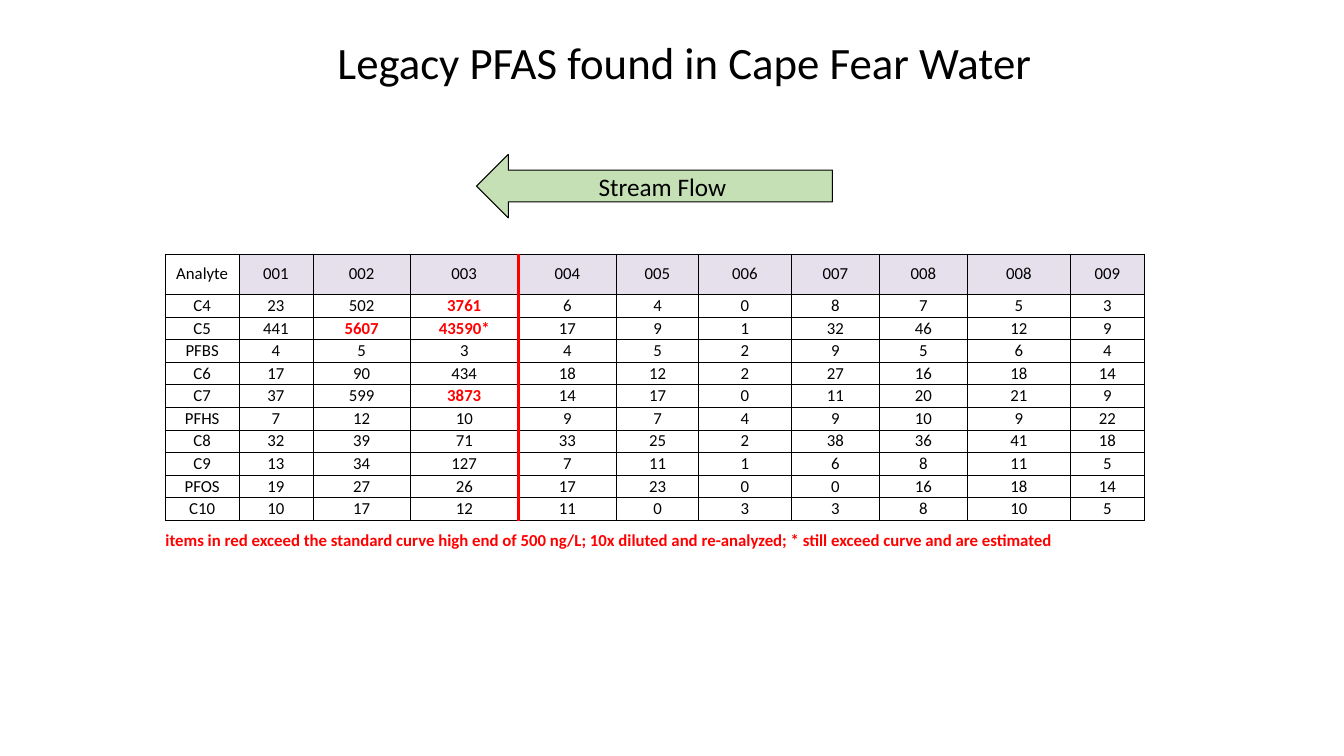
from lxml import etree
from pptx import Presentation
from pptx import util as u
from pptx.dml.color import RGBColor
from pptx.enum import shapes, text
from pptx.oxml.ns import qn

# Content
TITLE = "Legacy PFAS found in Cape Fear Water"
FLOW = "Stream Flow"
HEADER = ["Analyte", "001", "002", "003", "004", "005", "006", "007", "008", "008", "009"]
RESULTS = [
    ("C4", 23, 502, 3761, 6, 4, 0, 8, 7, 5, 3),
    ("C5", 441, 5607, "43590*", 17, 9, 1, 32, 46, 12, 9),
    ("PFBS", 4, 5, 3, 4, 5, 2, 9, 5, 6, 4),
    ("C6", 17, 90, 434, 18, 12, 2, 27, 16, 18, 14),
    ("C7", 37, 599, 3873, 14, 17, 0, 11, 20, 21, 9),
    ("PFHS", 7, 12, 10, 9, 7, 4, 9, 10, 9, 22),
    ("C8", 32, 39, 71, 33, 25, 2, 38, 36, 41, 18),
    ("C9", 13, 34, 127, 7, 11, 1, 6, 8, 11, 5),
    ("PFOS", 19, 27, 26, 17, 23, 0, 0, 16, 18, 14),
    ("C10", 10, 17, 12, 11, 0, 3, 3, 8, 10, 5),
]
EXCEEDING = {3761, 5607, "43590*", 3873}
NOTE = ("items in red exceed the standard curve high end of 500 ng/L; "
        "10x diluted and re-analyzed; * still exceed curve and are estimated")

# Layout in centimetres
LEFT, TOP = 4.17, 6.4
COLS = [1.85, 1.87, 2.45, 2.72, 2.48, 2.06, 2.34, 2.22, 2.22, 2.59, 1.87]
HEAD_H, ROW_H = 1.02, 0.57
BLACK, RED, WHITE, LILAC, GREEN = "000000", "FF0000", "FFFFFF", "E5E0EC", "C5E0B4"


def rgb(value):
    return RGBColor.from_string(value)


def write(tf, content, size=12, color=BLACK, bold=False,
          align=text.PP_ALIGN.CENTER):
    p = tf.paragraphs[0]
    p.alignment = align
    r = p.add_run()
    r.text = str(content)
    r.font.name, r.font.size, r.font.bold = "Calibri", u.Pt(size), bold
    r.font.color.rgb = rgb(color)


def add_borders(cell, visible):
    tc_pr = cell._tc.get_or_add_tcPr()
    for side in "LRTB":
        ln = etree.SubElement(tc_pr, qn(f"a:ln{side}"), w=str(u.Pt(0.5)))
        if side in visible:
            fill = etree.SubElement(ln, qn("a:solidFill"))
            etree.SubElement(fill, qn("a:srgbClr"), val=BLACK)
        else:
            etree.SubElement(ln, qn("a:noFill"))


def format_cell(cell, fill=None, borders="LRTB", anchor=text.MSO_ANCHOR.MIDDLE):
    add_borders(cell, borders)
    cell.margin_left = cell.margin_right = cell.margin_top = cell.margin_bottom = 0
    cell.vertical_anchor = anchor
    if fill:
        cell.fill.solid()
        cell.fill.fore_color.rgb = rgb(fill)
    else:
        cell.fill.background()


prs = Presentation()
prs.slide_width, prs.slide_height = u.Cm(33.87), u.Cm(19.05)
s = prs.slides.add_slide(prs.slide_layouts[5])

# Results table
rows = [HEADER, *RESULTS]
data_h = HEAD_H + ROW_H * len(RESULTS)
table = s.shapes.add_table(len(rows) + 1, len(COLS), u.Cm(LEFT), u.Cm(TOP),
                           u.Cm(sum(COLS)), u.Cm(data_h + ROW_H)).table
table.first_row = table.horz_banding = False
for column, width in zip(table.columns, COLS):
    column.width = u.Cm(width)
for i, row in enumerate(table.rows):
    row.height = u.Cm(ROW_H if i else HEAD_H)

for i, values in enumerate(rows):
    for j, value in enumerate(values):
        cell = table.cell(i, j)
        format_cell(cell, None if j == 0 else WHITE if i else LILAC)
        high = value in EXCEEDING
        write(cell.text_frame, value, color=RED if high else BLACK, bold=high)

# Note in the last row
last = len(rows)
for j in range(len(COLS)):
    format_cell(table.cell(last, j), borders="T", anchor=text.MSO_ANCHOR.BOTTOM)
note = table.cell(last, 0)
note.merge(table.cell(last, len(COLS) - 2))
write(note.text_frame, NOTE, color=RED, bold=True, align=text.PP_ALIGN.LEFT)

# Title
title = s.shapes.title
title.left, title.top, title.width, title.height = map(u.Cm, (8.25, 0.74, 18.19, 1.63))
tf = title.text_frame
tf.word_wrap = False
tf.vertical_anchor = text.MSO_ANCHOR.TOP
write(tf, TITLE, size=32, align=text.PP_ALIGN.LEFT)

# Stream direction
arrow = s.shapes.add_shape(shapes.MSO_SHAPE.LEFT_ARROW,
                           *map(u.Cm, (12.01, 3.89, 8.97, 1.6)))
arrow.shadow.inherit = False
arrow.fill.solid()
arrow.fill.fore_color.rgb = rgb(GREEN)
arrow.line.color.rgb = rgb(BLACK)
arrow.line.width = u.Pt(0.75)
tf = arrow.text_frame
tf.margin_top = tf.margin_bottom = 0
tf.vertical_anchor = text.MSO_ANCHOR.MIDDLE
write(tf, FLOW, size=18)

# Divider after site 003
x = u.Cm(LEFT + sum(COLS[:4]))
divider = s.shapes.add_connector(shapes.MSO_CONNECTOR.STRAIGHT,
                                 x, u.Cm(TOP), x, u.Cm(TOP + data_h))
divider.line.color.rgb = rgb(RED)
divider.line.width = u.Pt(2)
etree.SubElement(divider._element.spPr, qn("a:effectLst"))

prs.save("out.pptx")
